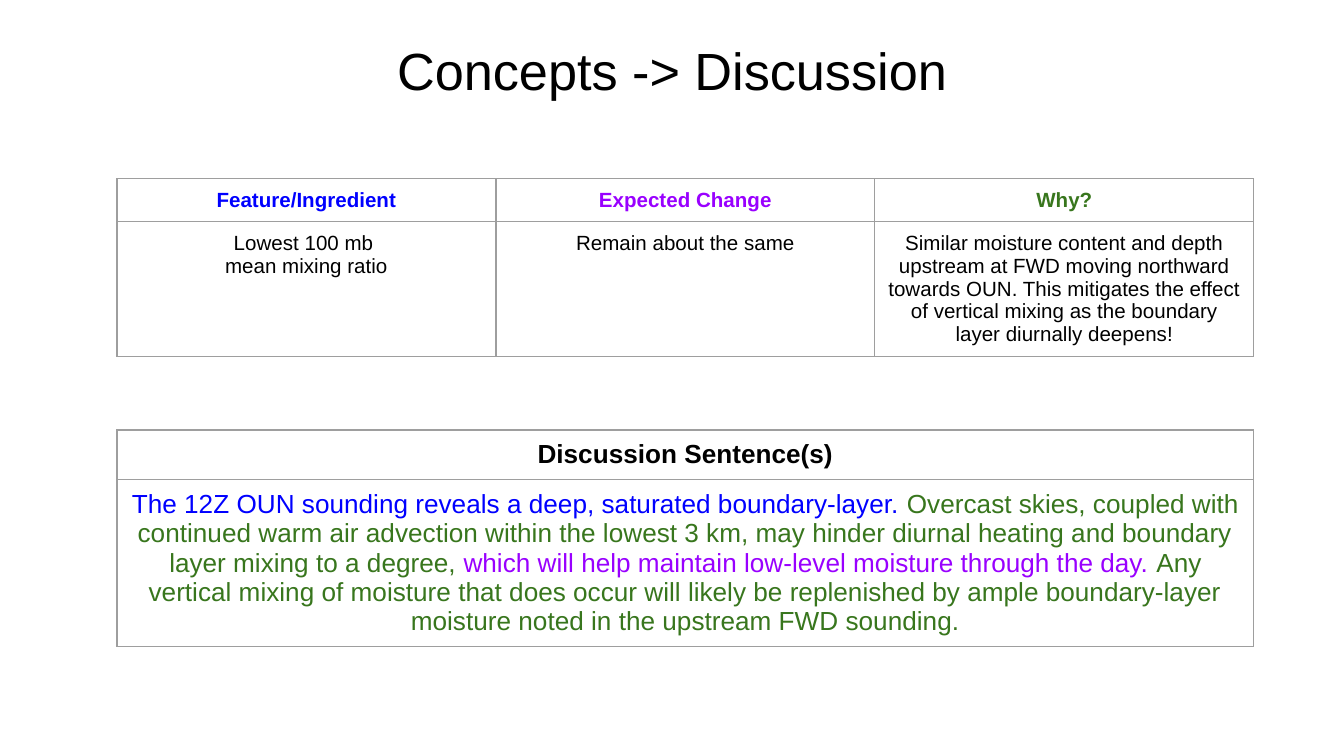
from dataclasses import dataclass

from lxml import etree
from pptx import Presentation
from pptx import util as u
from pptx.dml.color import RGBColor
from pptx.enum import text
from pptx.oxml import ns


@dataclass(frozen=True)
class Theme:
    font: str = "Arial"
    black: str = "000000"
    feature: str = "0000FF"
    change: str = "9900FF"
    why: str = "38761D"
    border: str = "9E9E9E"
    border_width: float = 0.75
    title: int = 28
    body: int = 11
    sentence: int = 14


THEME = Theme()
SLIDE_WIDTH = 10
SLIDE_HEIGHT = SLIDE_WIDTH * 9 / 16
TABLE_LEFT = 0.87
COLUMN_WIDTH = 2.82
COLUMNS = 3
ROW_HEIGHTS = (0.32, 0.85)
CELL_PADDING = (0.1, 0.15 / 2)


def add_text(p, content, size=THEME.body, color=THEME.black, bold=False):
    p.alignment = text.PP_ALIGN.CENTER
    r = p.add_run()
    r.text = content
    r.font.name = THEME.font
    r.font.size = u.Pt(size)
    r.font.bold = bold
    r.font.color.rgb = RGBColor.from_string(color)


def set_margins(target, horizontal, vertical):
    target.margin_left = target.margin_right = u.Inches(horizontal)
    target.margin_top = target.margin_bottom = u.Inches(vertical)


def add_borders(cell):
    properties = cell._tc.get_or_add_tcPr()
    for i, side in enumerate(("lnL", "lnR", "lnT", "lnB")):
        line = etree.Element(ns.qn(f"a:{side}"), w=str(u.Pt(THEME.border_width)))
        fill = etree.SubElement(line, ns.qn("a:solidFill"))
        etree.SubElement(fill, ns.qn("a:srgbClr"), val=THEME.border)
        properties.insert(i, line)


def add_title(s, content):
    sp = s.shapes.title
    sp.left, sp.top = u.Inches(0.5), u.Inches(0.17)
    sp.width, sp.height = u.Inches(9), u.Inches(0.7)
    tf = sp.text_frame
    tf.vertical_anchor = text.MSO_ANCHOR.MIDDLE
    set_margins(tf, 0.1, 0.05)
    add_text(tf.paragraphs[0], content, size=THEME.title)


def add_grid(s, top):
    frame = s.shapes.add_table(
        len(ROW_HEIGHTS), COLUMNS, u.Inches(TABLE_LEFT), u.Inches(top),
        u.Inches(COLUMN_WIDTH * COLUMNS), u.Inches(sum(ROW_HEIGHTS)))
    table = frame.table
    table.first_row = table.horz_banding = False
    for column in table.columns:
        column.width = u.Inches(COLUMN_WIDTH)
    for row, height in zip(table.rows, ROW_HEIGHTS):
        row.height = u.Inches(height)
    for cell in table.iter_cells():
        cell.fill.background()
        set_margins(cell, *CELL_PADDING)
        add_borders(cell)
    return table


def add_concepts(s):
    table = add_grid(s, 1.33)
    concepts = (
        ("Feature/Ingredient", THEME.feature,
         ("Lowest 100 mb ", "mean mixing ratio")),
        ("Expected Change", THEME.change, ("Remain about the same",)),
        ("Why?", THEME.why,
         ("Similar moisture content and depth upstream at FWD moving northward "
          "towards OUN. This mitigates the effect of vertical mixing as the "
          "boundary layer diurnally deepens!",)),
    )
    for column, (heading, color, lines) in enumerate(concepts):
        add_text(table.cell(0, column).text_frame.paragraphs[0], heading,
                 color=color, bold=True)
        tf = table.cell(1, column).text_frame
        for i, line in enumerate(lines):
            add_text(tf.add_paragraph() if i else tf.paragraphs[0], line)


def add_discussion(s):
    table = add_grid(s, 3.2)
    for row in range(len(ROW_HEIGHTS)):
        table.cell(row, 0).merge(table.cell(row, COLUMNS - 1))
    add_text(table.cell(0, 0).text_frame.paragraphs[0],
             "Discussion Sentence(s)", size=THEME.sentence, bold=True)
    sentences = (
        ("The 12Z OUN sounding reveals a deep, saturated boundary-layer. ",
         THEME.feature),
        ("Overcast skies, coupled with continued warm air advection within the "
         "lowest 3 km, may hinder diurnal heating and boundary layer mixing to "
         "a degree, ", THEME.why),
        ("which will help maintain low-level moisture through the day. ",
         THEME.change),
        ("Any vertical mixing of moisture that does occur will likely be "
         "replenished by ample boundary-layer moisture noted in the upstream "
         "FWD sounding.", THEME.why),
    )
    p = table.cell(1, 0).text_frame.paragraphs[0]
    for content, color in sentences:
        add_text(p, content, size=THEME.sentence, color=color)


def main():
    prs = Presentation()
    prs.slide_width = u.Inches(SLIDE_WIDTH)
    prs.slide_height = u.Inches(SLIDE_HEIGHT)
    s = prs.slides.add_slide(prs.slide_layouts[5])
    add_title(s, "Concepts -> Discussion")
    add_concepts(s)
    add_discussion(s)
    prs.save("out.pptx")


if __name__ == "__main__":
    main()
